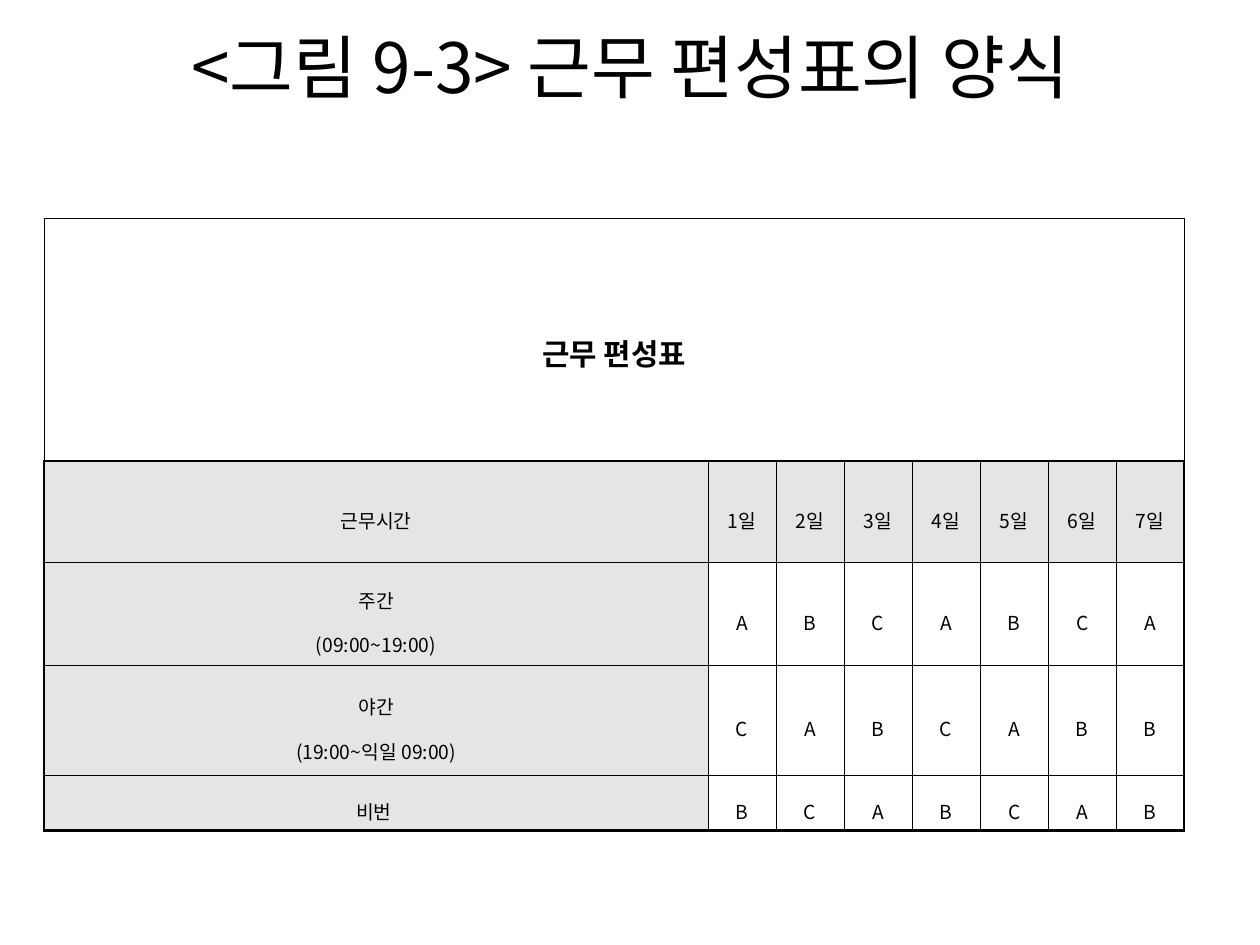
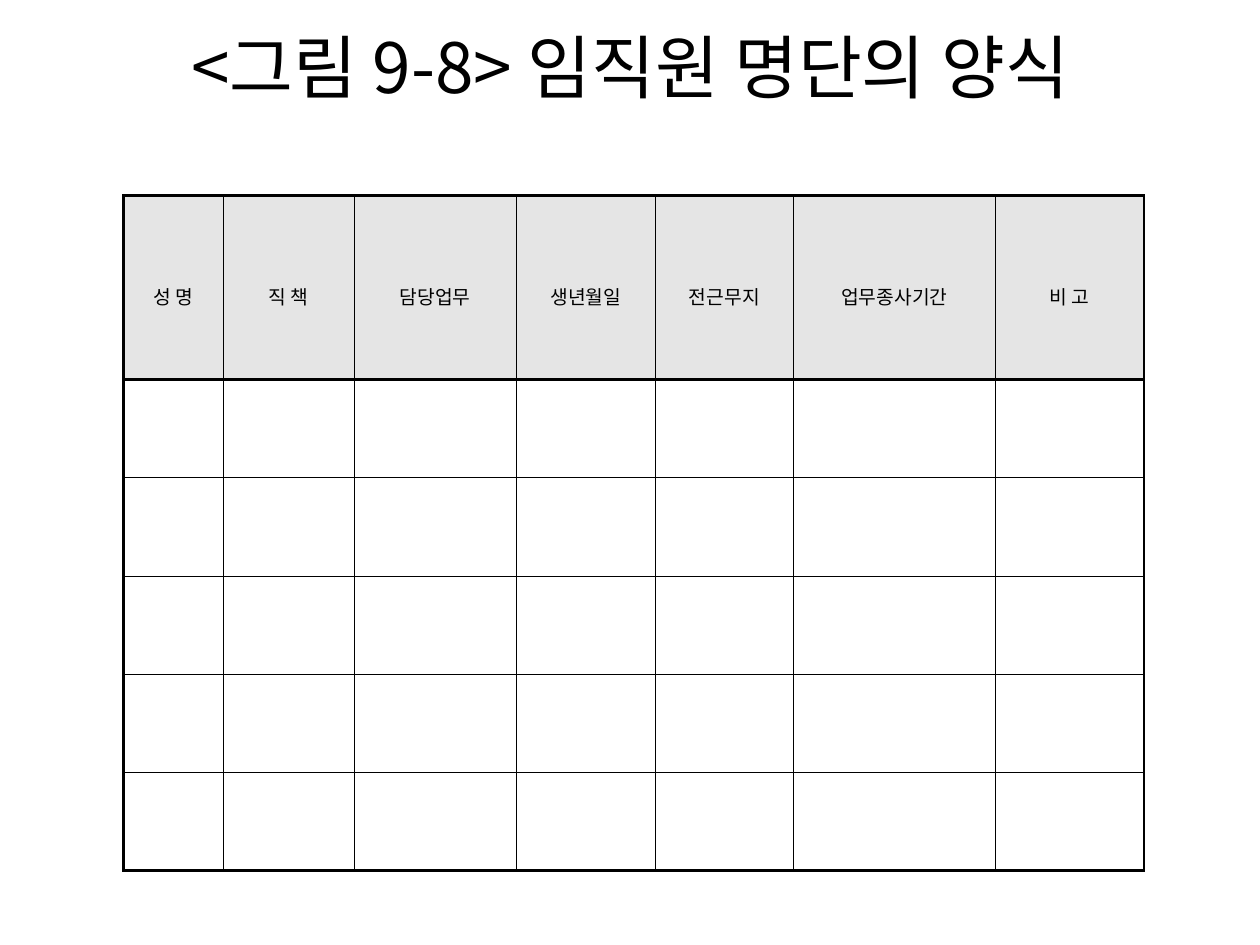
from lxml import etree
from pptx import Presentation
from pptx.dml.color import RGBColor
from pptx.enum.text import MSO_ANCHOR, MSO_AUTO_SIZE, PP_ALIGN
from pptx.oxml.ns import qn
from pptx.util import Inches, Pt

MIDDLE, CENTER, NO_FIT = MSO_ANCHOR.MIDDLE, PP_ALIGN.CENTER, MSO_AUTO_SIZE.NONE
FONT = "Noto Sans CJK KR"
BLACK = RGBColor(0x00, 0x00, 0x00)
GREY = RGBColor(0xE5, 0xE5, 0xE5)
THIN, FRAME, HEADER_RULE = 0.28, 1.7, 1.98

SLIDE_SIZE = (10, 7.5)
TITLE_BOX = {"left": 0.5, "top": 0.3, "width": 9, "height": 1.25}
TITLE_SIZE, CAPTION_SIZE, CELL_SIZE = 39.6, 17, 11
CELL_FORMAT = {
    "margin_left": Inches(0.07), "margin_right": Inches(0.07),
    "margin_top": Inches(0.02), "margin_bottom": Inches(0.02),
    "vertical_anchor": MIDDLE,
}

DAYS = 7
STAFF_COLUMNS = {
    "성 명": 0.79, "직 책": 1.04, "담당업무": 1.29, "생년월일": 1.1,
    "전근무지": 1.1, "업무종사기간": 1.6, "비 고": 1.18,
}
BLANK_ROWS = 5

FORMS = [
    {
        "title": "<그림 9-3> 근무 편성표의 양식",
        "caption": "근무 편성표",
        "rows": [
            ["근무시간"] + [f"{day}일" for day in range(1, DAYS + 1)],
            ["주간\n(09:00~19:00)", *"ABCABCA"],
            ["야간\n(19:00~익일 09:00)", *"CABCABB"],
            ["비번 ", *"BCABCAB"],
        ],
        "origin": (0.35, 1.73),
        "widths": [5.27] + [0.54] * DAYS,
        "heights": [1.93, 0.8, 0.82, 0.87, 0.44],
        "grey_first_column": True,
        "header_rule": THIN,
    },
    {
        "title": "<그림 9-8> 임직원 명단의 양식",
        "caption": None,
        "rows": [list(STAFF_COLUMNS)] + [[""] * len(STAFF_COLUMNS)] * BLANK_ROWS,
        "origin": (0.98, 1.55),
        "widths": list(STAFF_COLUMNS.values()),
        "heights": [1.46] + [0.78] * BLANK_ROWS,
        "grey_first_column": False,
        "header_rule": HEADER_RULE,
    },
]


def set_attributes(target, values):
    for name, value in values.items():
        setattr(target, name, value)


def write(frame, text, size, bold=False, line_spacing=None):
    frame.text = text
    for paragraph in frame.paragraphs:
        set_attributes(paragraph, {"alignment": CENTER, "line_spacing": line_spacing})
        for run in paragraph.runs:
            set_attributes(run.font, {"name": FONT, "size": Pt(size), "bold": bold})
            run.font.color.rgb = BLACK
            etree.SubElement(run.font._element, qn("a:ea"), typeface=FONT)


def draw_borders(cell, points_by_side):
    """Draw the sides, given in the order L, R, T, B."""
    properties = cell._tc.get_or_add_tcPr()
    for side, points in points_by_side.items():
        line = etree.SubElement(properties, qn(f"a:ln{side}"), w=str(int(Pt(points))))
        fill = etree.SubElement(line, qn("a:solidFill"))
        etree.SubElement(fill, qn("a:srgbClr"), val=str(BLACK))


def add_title(slide, text):
    title = slide.shapes.title
    set_attributes(title, {side: Inches(v) for side, v in TITLE_BOX.items()})
    write(title.text_frame, text, TITLE_SIZE)
    set_attributes(title.text_frame, {
        "auto_size": NO_FIT, "word_wrap": True, "vertical_anchor": MIDDLE,
        "margin_top": Inches(0.05), "margin_bottom": Inches(0.85),
    })


def add_form(slide, form):
    widths, heights = form["widths"], form["heights"]
    header = 1 if form["caption"] else 0
    last_row, last_column = len(heights) - 1, len(widths) - 1
    box = (*form["origin"], sum(widths), sum(heights))
    table = slide.shapes.add_table(
        len(heights), len(widths), *(Inches(v) for v in box)).table
    for column, width in zip(table.columns, widths):
        column.width = Inches(width)
    for row, height in zip(table.rows, heights):
        row.height = Inches(height)

    # Rules between rows: one above each row, plus the bottom edge.
    rules = [THIN] * (last_row + 2)
    rules[header] = rules[-1] = FRAME
    rules[header + 1] = form["header_rule"]

    for r in range(last_row + 1):
        edge = FRAME if r >= header else THIN
        for c in range(last_column + 1):
            cell = table.cell(r, c)
            set_attributes(cell, CELL_FORMAT)
            draw_borders(cell, {
                "L": edge if c == 0 else THIN,
                "R": edge if c == last_column else THIN,
                "T": rules[r],
                "B": rules[r + 1],
            })
            if r == header or (r > header and c == 0 and form["grey_first_column"]):
                cell.fill.solid()
                cell.fill.fore_color.rgb = GREY
            else:
                cell.fill.background()
            if r >= header:
                write(cell.text_frame, form["rows"][r - header][c], CELL_SIZE,
                      line_spacing=1.6)

    if form["caption"]:
        caption = table.cell(0, 0)
        caption.merge(table.cell(0, last_column))
        write(caption.text_frame, form["caption"], CAPTION_SIZE, bold=True,
              line_spacing=1.6)


def main():
    deck = Presentation()
    deck.slide_width, deck.slide_height = (Inches(v) for v in SLIDE_SIZE)
    title_only = deck.slide_layouts[5]
    for form in FORMS:
        slide = deck.slides.add_slide(title_only)
        add_title(slide, form["title"])
        add_form(slide, form)
    deck.save("out.pptx")


if __name__ == "__main__":
    main()
